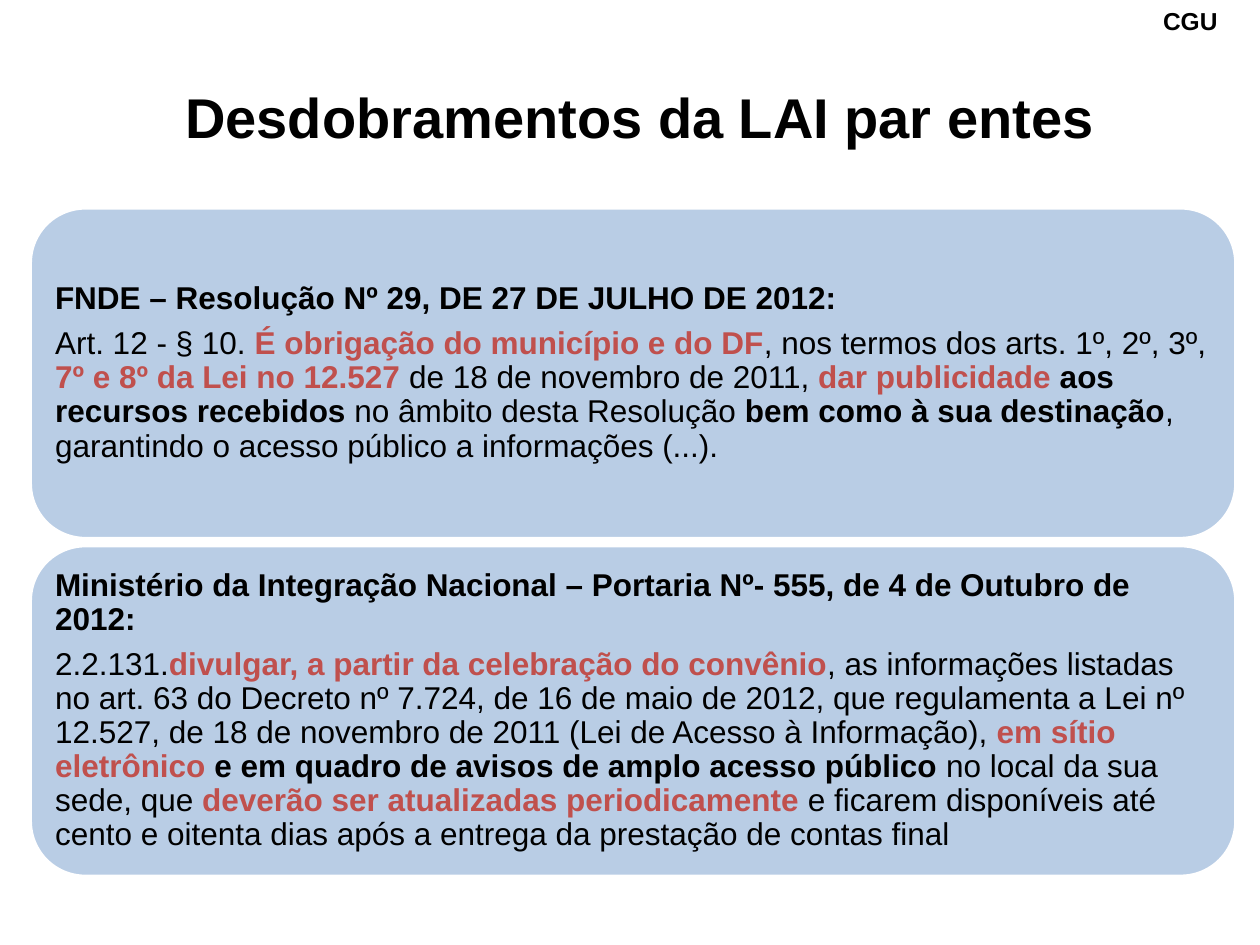
import dataclasses

import pptx
import pptx.dml.color
import pptx.enum.shapes
import pptx.enum.text
import pptx.util

Pt = pptx.util.Pt
Align = pptx.enum.text.PP_ALIGN
Anchor = pptx.enum.text.MSO_ANCHOR


@dataclasses.dataclass
class Theme:
    font: str = "Arial"
    text: str = "000000"
    accent: str = "C0504D"
    panel: str = "B9CDE5"
    outline: str = "FFFFFF"
    label_size: float = 14
    title_size: float = 32
    body_size: float = 18


theme = Theme()


def rgb(value):
    return pptx.dml.color.RGBColor.from_string(value)


def write(paragraph, text, *, size, bold=True, color=theme.text,
          align=Align.LEFT, line_spacing=None, space_after=None):
    """Append one formatted run to the paragraph."""
    paragraph.alignment = align
    paragraph.line_spacing = line_spacing
    paragraph.space_after = space_after
    run = paragraph.add_run()
    run.text = text
    run.font.name = theme.font
    run.font.size = Pt(size)
    run.font.bold = bold
    run.font.color.rgb = rgb(color)


presentation = pptx.Presentation()
presentation.slide_width = Pt(720)
presentation.slide_height = Pt(540)
slide = presentation.slides.add_slide(presentation.slide_layouts[5])

label = slide.shapes.add_textbox(Pt(657.5), Pt(0), Pt(62.5), Pt(24.25))
label.text_frame.word_wrap = True
write(label.text_frame.paragraphs[0], "CGU", size=theme.label_size)

title = slide.shapes.title
title.left, title.top, title.width, title.height = Pt(82), Pt(43.5), Pt(567.5), Pt(45.5)
title.text_frame.auto_size = pptx.enum.text.MSO_AUTO_SIZE.NONE
title.text_frame.vertical_anchor = Anchor.MIDDLE
write(title.text_frame.paragraphs[0], "Desdobramentos da LAI par entes",
      size=theme.title_size, align=Align.CENTER)

PLAIN = {"bold": False}
STRONG = {"bold": True}
ACCENT = {"bold": True, "color": theme.accent}

panels = [
    [
        [("FNDE – Resolução Nº 29, DE 27 DE JULHO DE 2012:", STRONG)],
        [
            ("Art. 12 - § 10. ", PLAIN),
            ("É obrigação do município e do DF", ACCENT),
            (", nos termos dos arts. 1º, 2º, 3º, ", PLAIN),
            ("7º e 8º da Lei no 12.527 ", ACCENT),
            ("de 18 de novembro de 2011, ", PLAIN),
            ("dar publicidade ", ACCENT),
            ("aos recursos recebidos ", STRONG),
            ("no âmbito desta Resolução ", PLAIN),
            ("bem como à sua destinação", STRONG),
            (", garantindo o acesso público a informações (...).", PLAIN),
        ],
    ],
    [
        [("Ministério da Integração Nacional – Portaria Nº- 555, "
          "de 4 de Outubro de 2012:", STRONG)],
        [
            ("2.2.131.", PLAIN),
            ("divulgar, a partir da celebração do convênio", ACCENT),
            (", as informações listadas no art. 63 do Decreto nº 7.724, "
             "de 16 de maio de 2012, que regulamenta a Lei nº 12.527, "
             "de 18 de novembro de 2011 (Lei de Acesso à Informação), ", PLAIN),
            ("em sítio eletrônico ", ACCENT),
            ("e em quadro de avisos de amplo acesso público", STRONG),
            (" no local da sua sede, que ", PLAIN),
            ("deverão ser atualizadas periodicamente ", ACCENT),
            ("e ficarem disponíveis até cento e oitenta dias após a entrega "
             "da prestação de contas final", PLAIN),
        ],
    ],
]

panel_top, panel_height, panel_gap = 118.8, 189, 4
for index, paragraphs in enumerate(panels):
    top = panel_top + index * (panel_height + panel_gap)
    panel = slide.shapes.add_shape(
        pptx.enum.shapes.MSO_SHAPE.ROUNDED_RECTANGLE,
        Pt(17.3), Pt(top), Pt(689), Pt(panel_height))
    panel.shadow.inherit = False
    panel.fill.solid()
    panel.fill.fore_color.rgb = rgb(theme.panel)
    panel.line.color.rgb = rgb(theme.outline)
    panel.line.width = Pt(2)

    frame = panel.text_frame
    frame.word_wrap = True
    frame.vertical_anchor = Anchor.MIDDLE
    frame.margin_left = frame.margin_right = Pt(5)
    frame.margin_top = frame.margin_bottom = Pt(5)
    for number, runs in enumerate(paragraphs):
        paragraph = frame.add_paragraph() if number else frame.paragraphs[0]
        for text, style in runs:
            write(paragraph, text, size=theme.body_size, line_spacing=0.9,
                  space_after=Pt(0.35 * theme.body_size), **style)

presentation.save("out.pptx")
